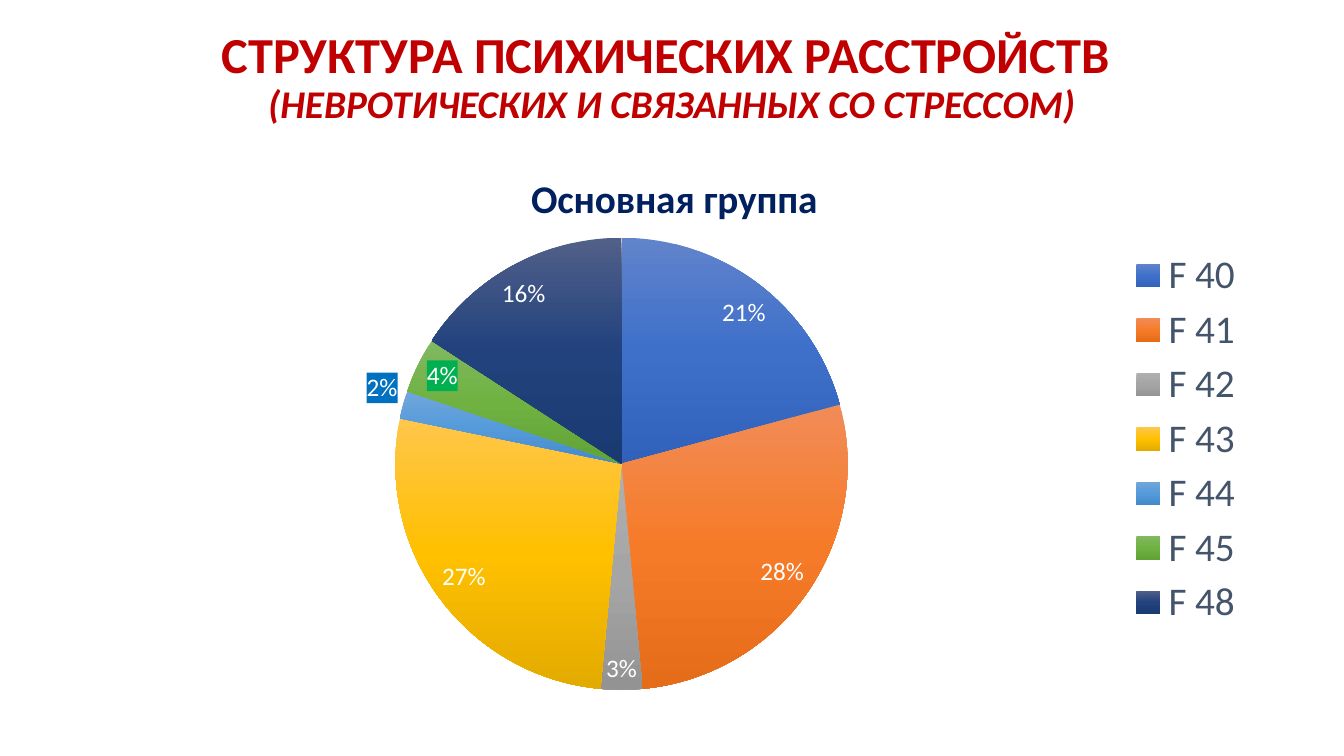
from copy import deepcopy

from pptx import Presentation
from pptx.chart.data import CategoryChartData
from pptx.dml.color import RGBColor
from pptx.enum.chart import XL_CHART_TYPE as ChartType, XL_LABEL_POSITION as LabelPosition
from pptx.enum.chart import XL_LEGEND_POSITION as LegendPosition
from pptx.enum.text import MSO_ANCHOR as Anchor, PP_ALIGN as Align
from pptx.oxml import parse_xml
from pptx.oxml.ns import nsdecls, qn
from pptx.util import Inches, Pt

FONT = "Calibri"
COLORS = {"heading": "C00000", "chart_title": "002060", "legend": "44546A",
          "label": "FFFFFF", "blue_tag": "0070C0", "green_tag": "00B050"}
HEADING = [("СТРУКТУРА ПСИХИЧЕСКИХ РАССТРОЙСТВ ", 36, False),
           ("(НЕВРОТИЧЕСКИХ И СВЯЗАННЫХ СО СТРЕССОМ)", 28, True)]
HEADING_BOX = (0.15, 0.14, 13.02, 1.28)
CHART_TITLE = "Основная группа"
CHART_BOX = (0.92, 1.35, 11.5, 6)
TITLE_CORNER = (5.2, 1.64)
PIE_BOX = (3.92, 2.36, 4.49, 4.49)
LEGEND_BOX = (11.13, 2.43, 1.25, 3.85)
SLICES = [
    ("F 40", 21, ("6183CB", "3E70CA", "3062BB")),
    ("F 41", 28, ("F18C57", "F67B28", "E56C19")),
    ("F 42", 3, ("AFAFAF", "A5A5A5", "939393")),
    ("F 43", 27, ("FFC64B", "FFC000", "E3AB00")),
    ("F 44", 2, ("71A6DB", "559BDB", "448ACA")),
    ("F 45", 4, ("81B861", "6FB242", "62A336")),
    ("F 48", 16, ("516089", "22427D", "1A3A72")),
]
TAGS = {4: ("blue_tag", LabelPosition.OUTSIDE_END), 5: ("green_tag", LabelPosition.BEST_FIT)}


def style_font(font, size, color, bold=False, italic=False):
    """Set the face, size, colour and weight of a font."""
    font.name, font.size = FONT, Pt(size)
    font.bold, font.italic = bold, italic
    font.color.rgb = RGBColor.from_string(COLORS[color])


def chart_layout(box, inner=False):
    """Return a manual layout for a box given in slide inches."""
    left, top, width, height = CHART_BOX
    fractions = [(box[0] - left) / width, (box[1] - top) / height]
    fractions += [side / whole for side, whole in zip(box[2:], (width, height))]
    target = '<c:layoutTarget val="inner"/>' if inner else ""
    modes = '<c:xMode val="edge"/><c:yMode val="edge"/>'
    values = "".join(f'<c:{key} val="{value:.3f}"/>' for key, value in zip("xywh", fractions))
    return parse_xml(f'<c:layout {nsdecls("c")}><c:manualLayout>{target}{modes}{values}'
                     "</c:manualLayout></c:layout>")


def place(element, layout, before):
    """Put a layout into a chart part ahead of the named child."""
    for old in element.findall(qn("c:layout")):
        element.remove(old)
    element.find(qn(before)).addprevious(layout)


def add_heading(slide):
    """Add the two-line slide heading."""
    text_frame = slide.shapes.add_textbox(*map(Inches, HEADING_BOX)).text_frame
    text_frame.word_wrap = True
    text_frame.vertical_anchor = Anchor.MIDDLE
    paragraph = text_frame.paragraphs[0]
    paragraph.text = "\v".join(text for text, _, _ in HEADING)
    paragraph.alignment = Align.CENTER
    paragraph.line_spacing = 0.9
    for run, (_, size, italic) in zip(paragraph.runs, HEADING):
        style_font(run.font, size, "heading", True, italic)


def color_slices(series):
    """Fill every slice with its vertical three-stop gradient."""
    fills = [series.points[index].format.fill for index in range(len(SLICES))]
    for fill in fills:
        fill.gradient()
        fill.gradient_angle = 270
    for stop_list in series._element.iter(qn("a:gsLst")):
        stop_list.append(deepcopy(stop_list[-1]))
    for fill, (_, _, colors) in zip(fills, SLICES):
        for stop, position, color in zip(fill.gradient_stops, (0, 0.5, 1), colors):
            stop.position = position
            stop.color.rgb = RGBColor.from_string(color)


def label_slices(plot, series):
    """Show percentages, with coloured tags on the small slices."""
    labels = series.data_labels
    labels.show_percentage, labels.show_value = True, False
    labels.position = LabelPosition.BEST_FIT
    style_font(labels.font, 18, "label")
    for index, (color, position) in TAGS.items():
        label = series.points[index].data_label
        style_font(label.font, 18, "label")
        label.position = position
        element = next(item for item in labels._element.findall(qn("c:dLbl"))
                       if item.find(qn("c:idx")).get("val") == str(index))
        element.find(qn("c:showVal")).set("val", "0")
        element.find(qn("c:showPercent")).set("val", "1")
        element.find(qn("c:txPr")).addprevious(parse_xml(
            f'<c:spPr {nsdecls("c", "a")}><a:solidFill><a:srgbClr val="{COLORS[color]}"/>'
            "</a:solidFill></c:spPr>"))


def add_pie(slide):
    """Add the pie chart with its title and legend."""
    data = CategoryChartData()
    data.categories = [name for name, _, _ in SLICES]
    data.add_series(CHART_TITLE, [value for _, value, _ in SLICES])
    chart = slide.shapes.add_chart(ChartType.PIE, *map(Inches, CHART_BOX), data).chart
    chart.font.name, chart.font.size = FONT, Pt(10)

    chart.has_title = True
    title = chart.chart_title
    title.text_frame.text = CHART_TITLE
    style_font(title.text_frame.paragraphs[0].runs[0].font, 28, "chart_title", True)
    title.include_in_layout = False
    place(title._element, chart_layout(TITLE_CORNER), "c:overlay")

    chart.has_legend = True
    legend = chart.legend
    legend.position = LegendPosition.RIGHT
    legend.include_in_layout = False
    style_font(legend.font, 28, "legend")
    place(legend._element, chart_layout(LEGEND_BOX), "c:overlay")

    plot = chart.plots[0]
    plot.vary_by_categories = True
    place(plot._element.getparent(), chart_layout(PIE_BOX, True), "c:pieChart")
    color_slices(plot.series[0])
    label_slices(plot, plot.series[0])


def main():
    """Build the slide and save it."""
    presentation = Presentation()
    presentation.slide_width, presentation.slide_height = Inches(13.33), Inches(7.5)
    slide = presentation.slides.add_slide(presentation.slide_layouts[6])
    add_heading(slide)
    add_pie(slide)
    presentation.save("out.pptx")


if __name__ == "__main__":
    main()
